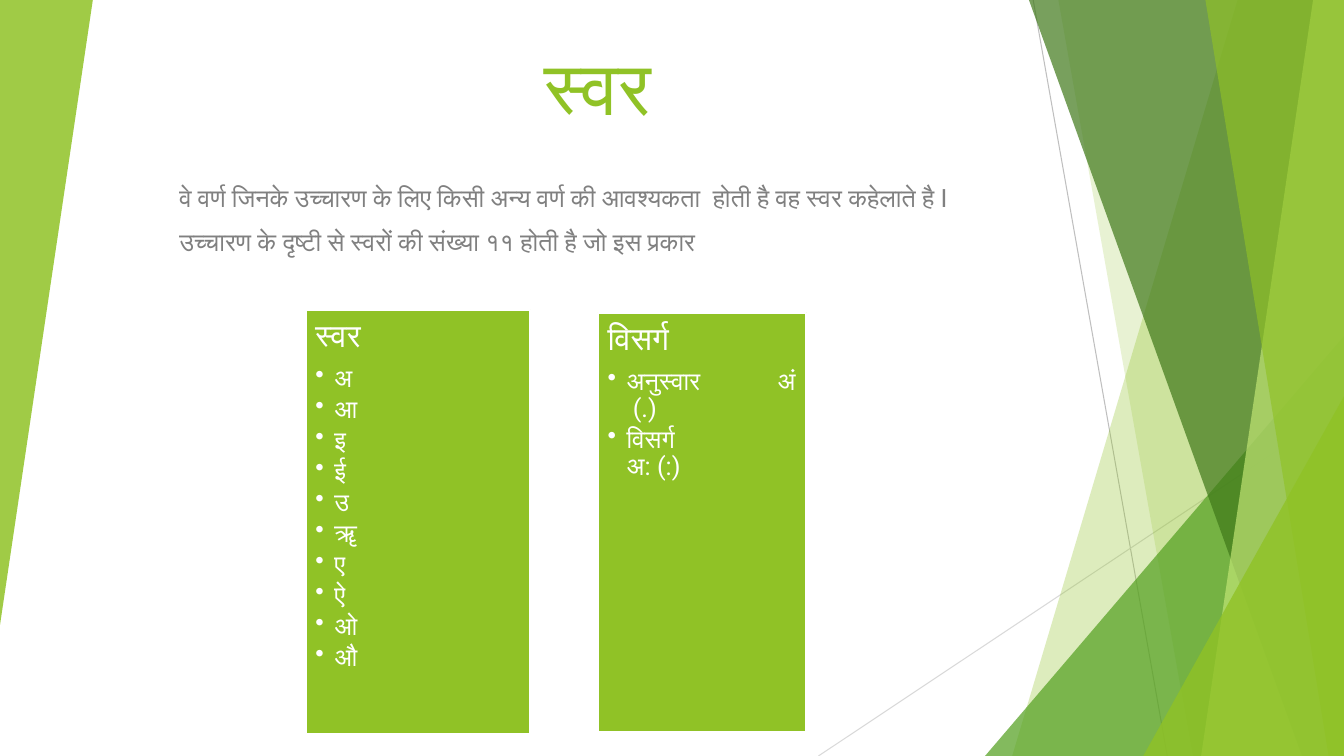
from dataclasses import dataclass

from lxml.etree import SubElement
from pptx import Presentation
from pptx.dml.color import RGBColor
from pptx.enum.shapes import MSO_CONNECTOR as CONN, MSO_SHAPE as SHAPE
from pptx.enum.text import MSO_ANCHOR as ANCHOR, PP_ALIGN as ALIGN
from pptx.oxml.ns import qn
from pptx.util import Pt


@dataclass(frozen=True)
class Theme:
    lime: str = "90C226"
    green: str = "54A021"
    forest: str = "3F7819"
    pale: str = "C0E474"
    grey: str = "808080"
    mid_line: str = "BFBFBF"
    light_line: str = "D9D9D9"
    white: str = "FFFFFF"
    font: str = "Roboto"
    title: int = 54
    head: float = 23
    body: int = 18


T = Theme()
W, H = 960, 540
INSET = 7.2
INDENT = 13.5

RAYS = [
    ((738, 0), (833.8, H), T.mid_line),
    ((W, 290), (584.6, H), T.light_line),
]
BACK_BANDS = [
    (884.2, 723, T.lime, 30),
    (756, 851.8, T.lime, 20),
]
FRONT_BANDS = [
    (735.1, 929.5, T.forest, 70),
    (938.2, 858.2, T.pale, 70),
    (861.1, 949, T.lime, 65),
]
DEFINITION = [
    "\tवे वर्ण जिनके उच्चारण के लिए किसी अन्य वर्ण की आवश्यकता  होती है वह स्वर कहेलाते है I",
    "\tउच्चारण के दृष्टी से स्वरों की संख्या ११ होती है जो इस प्रकार",
]
VOWELS = "अ आ इ ई उ ॠ ए ऐ ओ औ".split()
VISARGA = ["अनुस्वार\tअं  (.)", "विसर्ग \t\tअ: (:)"]


def apply(obj, **values):
    for name, value in values.items():
        setattr(obj, name, value)


def fill(sp, color, alpha=100):
    sp.shadow.inherit = False
    sp.line.fill.background()
    sp.fill.solid()
    sp.fill.fore_color.rgb = RGBColor.from_string(color)
    if alpha < 100:
        clr = sp.fill._xPr.find(qn("a:solidFill"))[0]
        SubElement(clr, qn("a:alpha"), val=str(alpha * 1000))


def add_ray(s, start, end, color):
    c = s.shapes.add_connector(CONN.STRAIGHT, *map(Pt, start + end))
    apply(c.line, width=Pt(0.75))
    c.line.color.rgb = RGBColor.from_string(color)
    SubElement(c._element.spPr, qn("a:effectLst"))


def add_band(s, top_x, bottom_x, color, alpha):
    fb = s.shapes.build_freeform(top_x, 0, scale=Pt(1))
    fb.add_line_segments([(W, 0), (W, H), (bottom_x, H)], close=True)
    fill(fb.convert_to_shape(), color, alpha)


def add_wedge(s, box, color, alpha, rotation=0):
    sp = s.shapes.add_shape(SHAPE.ISOSCELES_TRIANGLE, *map(Pt, box))
    sp.adjustments[0] = 1
    sp.rotation = rotation
    fill(sp, color, alpha)


def add_paragraph(tf, text, size, color, **layout):
    p = tf.paragraphs[0]
    if p.runs:
        p = tf.add_paragraph()
    apply(p, **layout)
    r = p.add_run()
    r.text = text
    apply(r.font, name=T.font, size=Pt(size))
    r.font.color.rgb = RGBColor.from_string(color)
    SubElement(r._r.rPr, qn("a:cs"), typeface=T.font)
    return p


def add_bullet(p, tab):
    pPr = p._p.get_or_add_pPr()
    pPr.set("marL", str(Pt(INDENT)))
    pPr.set("indent", str(-Pt(INDENT)))
    SubElement(pPr, qn("a:buChar"), char="•")
    tabs = SubElement(pPr, qn("a:tabLst"))
    SubElement(tabs, qn("a:tab"), pos=str(Pt(tab)), algn="l")


def add_text(s, box, lines, size, color, anchor=ANCHOR.TOP, **layout):
    tf = s.shapes.add_textbox(*map(Pt, box)).text_frame
    apply(tf, word_wrap=True, vertical_anchor=anchor)
    for line in lines:
        add_paragraph(tf, line, size, color, **layout)


def add_card(s, box, heading, items):
    sp = s.shapes.add_shape(SHAPE.RECTANGLE, *map(Pt, box))
    fill(sp, T.lime)
    sp.line.color.rgb = RGBColor.from_string(T.white)
    sp.line.width = Pt(1.5)
    tf = sp.text_frame
    apply(tf, word_wrap=True, vertical_anchor=ANCHOR.TOP)
    for side in ("left", "top", "right", "bottom"):
        setattr(tf, f"margin_{side}", Pt(INSET))
    layout = dict(alignment=ALIGN.LEFT, line_spacing=0.9)
    add_paragraph(tf, heading, T.head, T.white, space_after=Pt(8), **layout)
    for item in items:
        p = add_paragraph(tf, item, T.body, T.white, level=1,
                          space_after=Pt(2.7), **layout)
        add_bullet(p, 121.5)


def main():
    prs = Presentation()
    apply(prs, slide_width=Pt(W), slide_height=Pt(H))
    s = prs.slides.add_slide(prs.slide_layouts[6])

    for ray in RAYS:
        add_ray(s, *ray)
    for band in BACK_BANDS:
        add_band(s, *band)
    add_wedge(s, (703.6, 240, 256.4, 300), T.green, 72)
    for band in FRONT_BANDS:
        add_band(s, *band)
    add_wedge(s, (816.6, 283, 143.4, 257), T.lime, 80)
    add_wedge(s, (0, 0, 66.3, 446.4), T.lime, 85, rotation=180)

    add_text(s, (128.2, 20.9, 611.3, 76.3), ["स्वर "], T.title, T.lime,
             anchor=ANCHOR.BOTTOM, alignment=ALIGN.CENTER)
    add_text(s, (85, 126.7, 611.3, 86.4), DEFINITION, T.body, T.grey,
             space_before=Pt(10))
    add_card(s, (218.2, 221.2, 160.4, 303), "स्वर", VOWELS)
    add_card(s, (427, 223.3, 149, 299.4), "विसर्ग", VISARGA)

    prs.save("out.pptx")


if __name__ == "__main__":
    main()
